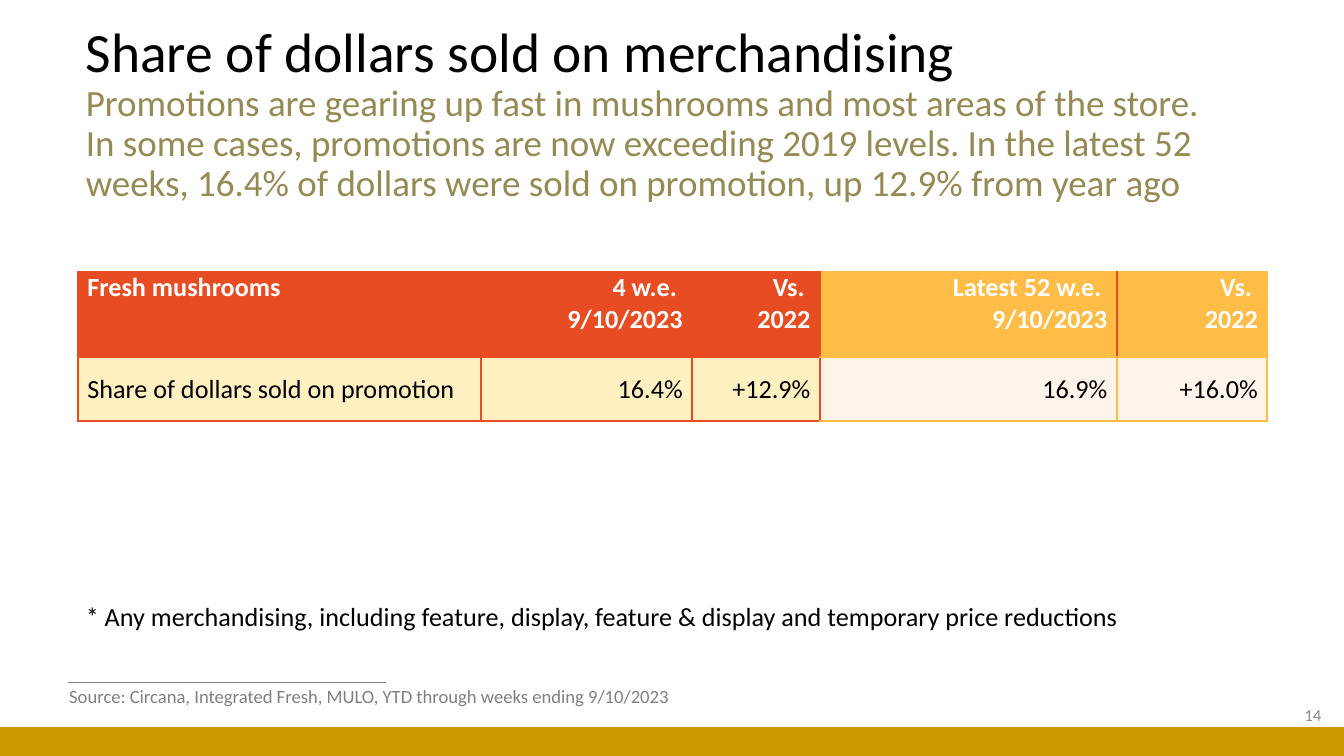
from dataclasses import dataclass

from lxml.etree import SubElement
from pptx import Presentation
from pptx.dml.color import RGBColor
from pptx.enum.shapes import MSO_CONNECTOR, MSO_SHAPE
from pptx.enum.text import MSO_ANCHOR, MSO_AUTO_SIZE, PP_ALIGN
from pptx.oxml import parse_xml
from pptx.oxml.ns import nsdecls, qn
from pptx.util import Pt


@dataclass(frozen=True)
class Theme:
    font: str = "Calibri"
    black: str = "000000"
    white: str = "FFFFFF"
    gray: str = "808080"
    light_gray: str = "8C8C8C"
    olive: str = "948A54"
    gold: str = "CC9900"
    red: str = "E84C22"
    amber: str = "FFBD47"
    pale_yellow: str = "FFF0C2"
    pale_orange: str = "FFF4E9"
    title_size: float = 29.7
    subtitle_size: float = 19.8
    body_size: float = 14
    source_size: float = 10
    number_size: float = 9


def write(para, text, *, font, size, color, bold=False, align=None):
    if align is not None:
        para.alignment = align
    span = para.add_run()
    span.text = text
    span.font.name = font
    span.font.size = Pt(size)
    span.font.bold = bold
    span.font.color.rgb = RGBColor.from_string(color)


class Slide:
    def __init__(self, deck, theme):
        self.theme = theme
        self.page = deck.slides.add_slide(deck.slide_layouts[6])

    def rule(self, left, top, length):
        line = self.page.shapes.add_connector(
            MSO_CONNECTOR.STRAIGHT, Pt(left), Pt(top), Pt(left + length), Pt(top))
        line.line.color.rgb = RGBColor.from_string(self.theme.gray)
        line.line.width = Pt(0.5)
        SubElement(line._element.spPr, qn("a:effectLst"))

    def bar(self, left, top, width, height, color):
        bar = self.page.shapes.add_shape(
            MSO_SHAPE.RECTANGLE, Pt(left), Pt(top), Pt(width), Pt(height))
        bar.shadow.inherit = False
        bar.fill.solid()
        bar.fill.fore_color.rgb = RGBColor.from_string(color)
        bar.line.fill.background()

    def box(self, left, top, width, height, anchor=MSO_ANCHOR.TOP, wrap=True):
        box = self.page.shapes.add_textbox(Pt(left), Pt(top), Pt(width), Pt(height))
        frame = box.text_frame
        frame.word_wrap = wrap
        frame.auto_size = MSO_AUTO_SIZE.NONE if wrap else MSO_AUTO_SIZE.SHAPE_TO_FIT_TEXT
        frame.vertical_anchor = anchor
        return frame.paragraphs[0]

    def title(self, heading, message):
        theme = self.theme
        para = self.box(38.9, 22.3, 615.6, 78.5, MSO_ANCHOR.MIDDLE)
        para.line_spacing = 0.9
        write(para, heading, font=theme.font, size=theme.title_size, color=theme.black)
        para.add_line_break()
        write(para, message, font=theme.font, size=theme.subtitle_size, color=theme.olive)

    def label(self, text, left, top, width, height, size, color):
        para = self.box(left, top, width, height, wrap=False)
        write(para, text, font=self.theme.font, size=size, color=color)

    def number(self, text):
        para = self.box(553, 372.2, 162, 21.6, MSO_ANCHOR.MIDDLE)
        write(para, text, font=self.theme.font, size=self.theme.number_size,
              color=self.theme.light_gray, align=PP_ALIGN.RIGHT)

    def borders(self, cell, colors):
        properties = cell._tc.get_or_add_tcPr()
        for position, (side, color) in enumerate(zip("LRTB", colors)):
            properties.insert(position, parse_xml(
                f'<a:ln{side} {nsdecls("a")} w="{Pt(1)}"><a:solidFill>'
                f'<a:srgbClr val="{color}"/></a:solidFill></a:ln{side}>'))

    def cell(self, cell, text, fill, color, bold, align, anchor):
        cell.fill.solid()
        cell.fill.fore_color.rgb = RGBColor.from_string(fill)
        cell.vertical_anchor = anchor
        cell.margin_left = cell.margin_right = Pt(5)
        cell.margin_top = cell.margin_bottom = 0
        frame = cell.text_frame
        for index, line in enumerate(text.split("\n")):
            para = frame.add_paragraph() if index else frame.paragraphs[0]
            write(para, line, font=self.theme.font, size=self.theme.body_size,
                  color=color, bold=bold, align=align)

    def table(self, left, top, widths, heights, rows, amber_from):
        theme = self.theme
        table = self.page.shapes.add_table(
            len(rows), len(widths), Pt(left), Pt(top),
            Pt(sum(widths)), Pt(sum(heights))).table
        table.first_row = table.horz_banding = False
        for column, width in zip(table.columns, widths):
            column.width = Pt(width)
        for row, height in zip(table.rows, heights):
            row.height = Pt(height)
        for r, texts in enumerate(rows):
            header = r == 0
            for c, text in enumerate(texts):
                amber = c >= amber_from
                accent = theme.amber if amber else theme.red
                pale = theme.pale_orange if amber else theme.pale_yellow
                last = c == len(texts) - 1
                cell = table.cell(r, c)
                self.cell(cell, text,
                          fill=accent if header else pale,
                          color=theme.white if header else theme.black,
                          bold=header,
                          align=PP_ALIGN.RIGHT if c else PP_ALIGN.LEFT,
                          anchor=MSO_ANCHOR.TOP if header else MSO_ANCHOR.MIDDLE)
                left_color = accent if last and not header else theme.red
                right_color = theme.red if header and not last else accent
                self.borders(cell, (left_color, right_color, accent, accent))


def main():
    theme = Theme()
    deck = Presentation()
    deck.slide_width, deck.slide_height = Pt(720), Pt(405)
    slide = Slide(deck, theme)
    slide.rule(36.7, 365.6, 170)
    slide.bar(0, 389.5, 720, 15.5, theme.gold)
    slide.title(
        "Share of dollars sold on merchandising",
        "Promotions are gearing up fast in mushrooms and most areas of the store. "
        "In some cases, promotions are now exceeding 2019 levels. In the latest 52 "
        "weeks, 16.4% of dollars were sold on promotion, up 12.9% from year ago")
    slide.number("14")
    slide.label("Source: Circana, Integrated Fresh, MULO, YTD through weeks ending 9/10/2023",
                30, 363.6, 346.3, 19.4, theme.source_size, theme.gray)
    slide.label("* Any merchandising, including feature, display, feature & display "
                "and temporary price reductions",
                38.9, 318.2, 583.2, 24.2, theme.body_size, theme.black)
    slide.table(
        41.8, 145.6, [216, 113, 68.4, 159.1, 80.6], [45.8, 34.2],
        [["Fresh mushrooms", "4 w.e. \n9/10/2023", "Vs. \n2022",
          " Latest 52 w.e. \n9/10/2023", "Vs. \n2022"],
         ["Share of dollars sold on promotion", "16.4%", "+12.9%", "16.9%", "+16.0%"]],
        amber_from=3)
    deck.save("out.pptx")


if __name__ == "__main__":
    main()
